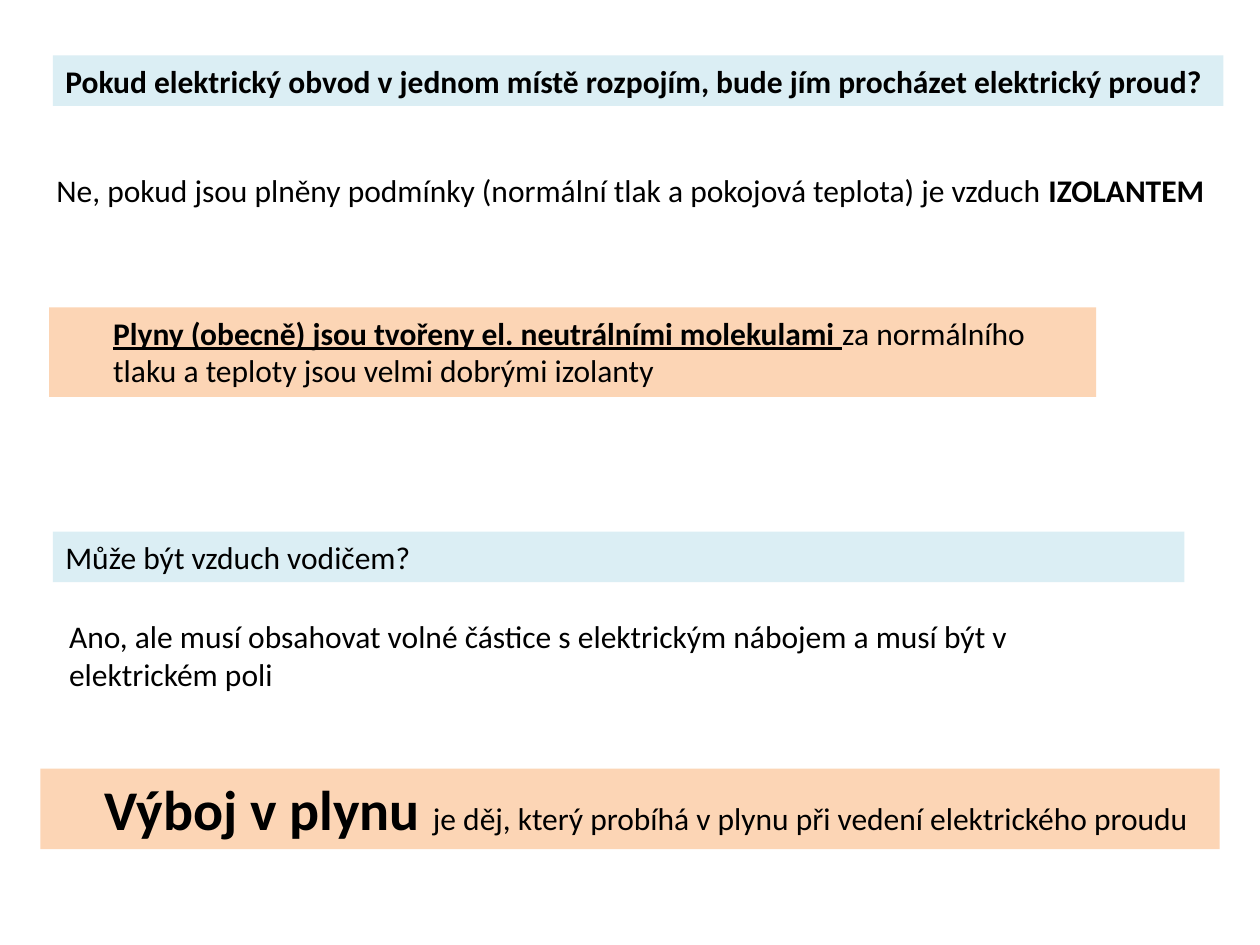
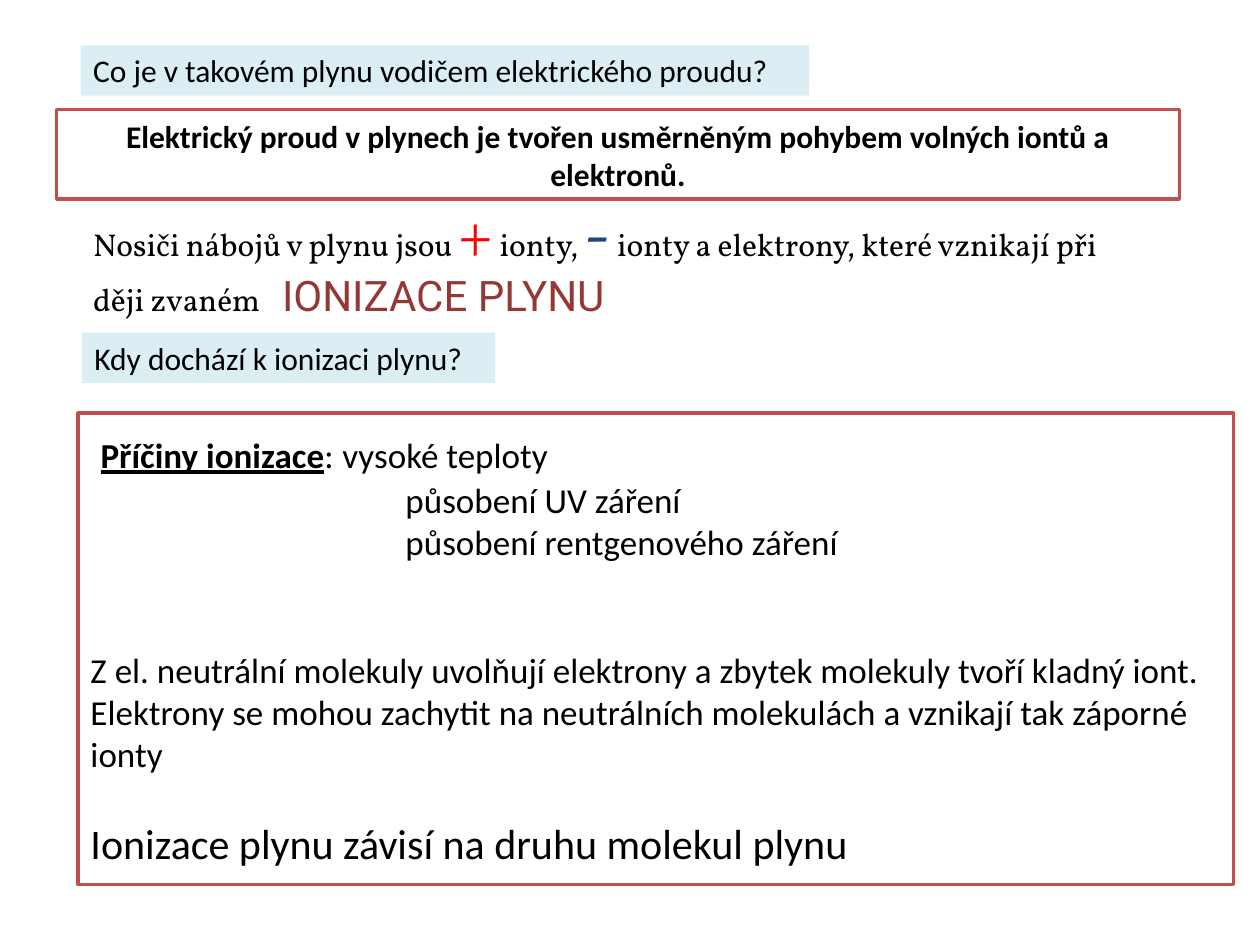
"""Build two slides about electric current in gases."""
from lxml import etree
from pptx import Presentation
from pptx.dml.color import RGBColor
from pptx.enum.shapes import MSO_SHAPE
from pptx.enum.text import MSO_ANCHOR, PP_ALIGN
from pptx.oxml.ns import qn
from pptx.util import Inches, Pt

RECTANGLE = MSO_SHAPE.RECTANGLE
TOP, BOTTOM = MSO_ANCHOR.TOP, MSO_ANCHOR.BOTTOM
LEFT, CENTER = PP_ALIGN.LEFT, PP_ALIGN.CENTER
BLANK_LAYOUT = 6

COLORS = {
    "text": "000000",
    "question": "DBEEF4",
    "definition": "FCD5B5",
    "paper": "FFFFFF",
    "frame": "C0504D",
    "plus": "FF0000",
    "minus": "1F497D",
    "term": "953735",
}


def color(name):
    """Return the named colour."""
    return RGBColor.from_string(COLORS[name])


class SlideBuilder:
    """Hold the text style and the slide being built."""

    font = "Calibri"
    size = 18

    def __init__(self, deck):
        self.deck = deck
        self.slide = None

    def new_slide(self):
        """Start a blank slide."""
        self.slide = self.deck.slides.add_slide(self.deck.slide_layouts[BLANK_LAYOUT])

    def fill_para(self, para, *spans, align=LEFT, margin=0, indent=0, tab=None,
                  before=0, after=0):
        """Fill a paragraph with (text, style) spans."""
        para.alignment = align
        para.space_before, para.space_after = Pt(before), Pt(after)
        properties = para._p.get_or_add_pPr()
        properties.set("marL", str(Inches(margin)))
        properties.set("indent", str(Inches(indent)))
        if tab:
            stops = etree.SubElement(properties, qn("a:tabLst"))
            etree.SubElement(stops, qn("a:tab"), pos=str(Inches(tab)), algn="l")
        for text, style in spans:
            span = para.add_run()
            span.text = text
            span.font.name = style.get("font", self.font)
            span.font.size = Pt(style.get("size", self.size))
            span.font.bold = style.get("bold", False)
            span.font.underline = style.get("underline", False)
            span.font.color.rgb = color(style.get("color", "text"))

    def prepare(self, box, anchor=TOP):
        """Wrap and anchor the text of a box and return its frame."""
        frame = box.text_frame
        frame.word_wrap = True
        frame.vertical_anchor = anchor
        return frame

    def text(self, place, *spans, **layout):
        """Add a plain text box."""
        box = self.slide.shapes.add_textbox(*map(Inches, place))
        self.fill_para(self.prepare(box).paragraphs[0], *spans, **layout)

    def panel(self, place, fill, line=None, anchor=TOP):
        """Add a filled rectangle and return its text frame."""
        box = self.slide.shapes.add_shape(RECTANGLE, *map(Inches, place))
        box.shadow.inherit = False
        box.fill.solid()
        box.fill.fore_color.rgb = color(fill)
        if line:
            box.line.color.rgb = color(line)
            box.line.width = Pt(2)
        else:
            box.line.fill.background()
        return self.prepare(box, anchor)

    def question(self, left, top, width, text, bold=False):
        """Add a one-line question band."""
        frame = self.panel((left, top, width, 0.4), "question")
        self.fill_para(frame.paragraphs[0], (text, {"bold": bold}))

    def definition(self, place, *spans):
        """Add an indented definition band."""
        frame = self.panel(place, "definition")
        self.fill_para(frame.paragraphs[0], *spans, margin=0.41)
        return frame

    def framed(self, place, anchor=TOP):
        """Add a white panel with a red frame."""
        return self.panel(place, "paper", "frame", anchor)


def build_insulator_slide(builder):
    """Explain when air insulates and when it conducts."""
    builder.new_slide()
    builder.question(
        0.42, 0.44, 9.29,
        "Pokud elektrický obvod v jednom místě rozpojím, bude jím procházet elektrický proud?",
        bold=True)
    builder.text(
        (0.35, 1.31, 9.36, 0.4),
        ("Ne, pokud jsou plněny podmínky (normální tlak a pokojová teplota) je vzduch ", {}),
        ("IZOLANTEM", {"bold": True}))
    gases = builder.definition(
        (0.39, 2.44, 8.31, 0.71),
        ("Plyny (obecně) jsou tvořeny el. neutrálními molekulami ",
         {"bold": True, "underline": True}),
        ("za normálního tlaku a teploty jsou velmi dobrými izolanty", {}))
    gases.margin_right = Inches(0.3)
    builder.question(0.42, 4.22, 8.98, "Může být vzduch vodičem?")
    builder.text(
        (0.45, 4.85, 8.71, 0.71),
        ("Ano, ale musí obsahovat volné částice s elektrickým nábojem "
         "a musí být v elektrickém poli", {}))
    builder.definition(
        (0.32, 6.1, 9.36, 0.64),
        ("Výboj v plynu ", {"size": 32, "bold": True}),
        ("je děj, který probíhá v plynu při vedení elektrického proudu", {}))


def build_ionization_slide(builder):
    """Explain charge carriers and the causes of ionization."""
    builder.new_slide()
    serif = {"font": "Vollkorn"}
    sign = {"font": "Vollkorn", "size": 36}
    builder.text(
        (0.64, 1.49, 8.27, 1.11),
        ("Nosiči nábojů v plynu jsou ", serif),
        ("+", {**sign, "color": "plus"}),
        (" ionty, ", serif),
        ("-", {**sign, "color": "minus"}),
        (" ionty a elektrony, které vznikají při ději zvaném\t", serif),
        ("IONIZACE PLYNU", {"font": "Roboto", "size": 24, "color": "term"}),
        tab=1.48)

    causes = builder.framed((0.62, 3.28, 9.17, 3.74))
    causes.margin_top = Inches(0.16)
    body = {"size": 20}
    builder.fill_para(
        causes.paragraphs[0],
        ("Příčiny ionizace", {**body, "bold": True, "underline": True}),
        (":\tvysoké teploty", body),
        indent=0.08, tab=2.56, after=2)
    lines = [
        ("působení UV záření", body, {"margin": 2.5}),
        ("působení rentgenového záření", body, {"margin": 2.5}),
        ("Z el. neutrální molekuly uvolňují elektrony a zbytek molekuly tvoří kladný iont. "
         "Elektrony se mohou zachytit na neutrálních molekulách a vznikají tak záporné ionty",
         body, {"before": 48.8}),
        ("Ionizace plynu závisí na druhu molekul plynu", {"size": 24}, {"before": 24.4}),
    ]
    for text, style, layout in lines:
        builder.fill_para(causes.add_paragraph(), (text, style), **layout)

    builder.question(0.64, 0.36, 5.78, "Co je v takovém plynu vodičem elektrického proudu?")
    builder.question(0.65, 2.64, 3.28, "Kdy dochází k ionizaci plynu?")
    current = builder.framed((0.45, 0.87, 8.91, 0.71), BOTTOM)
    builder.fill_para(
        current.paragraphs[0],
        ("Elektrický proud v plynech je tvořen usměrněným pohybem volných iontů a elektronů.",
         {"bold": True}),
        align=CENTER)


def main():
    """Build and save the deck."""
    deck = Presentation()
    deck.slide_width, deck.slide_height = Inches(10), Inches(7.5)
    builder = SlideBuilder(deck)
    build_insulator_slide(builder)
    build_ionization_slide(builder)
    deck.save("out.pptx")


if __name__ == "__main__":
    main()
